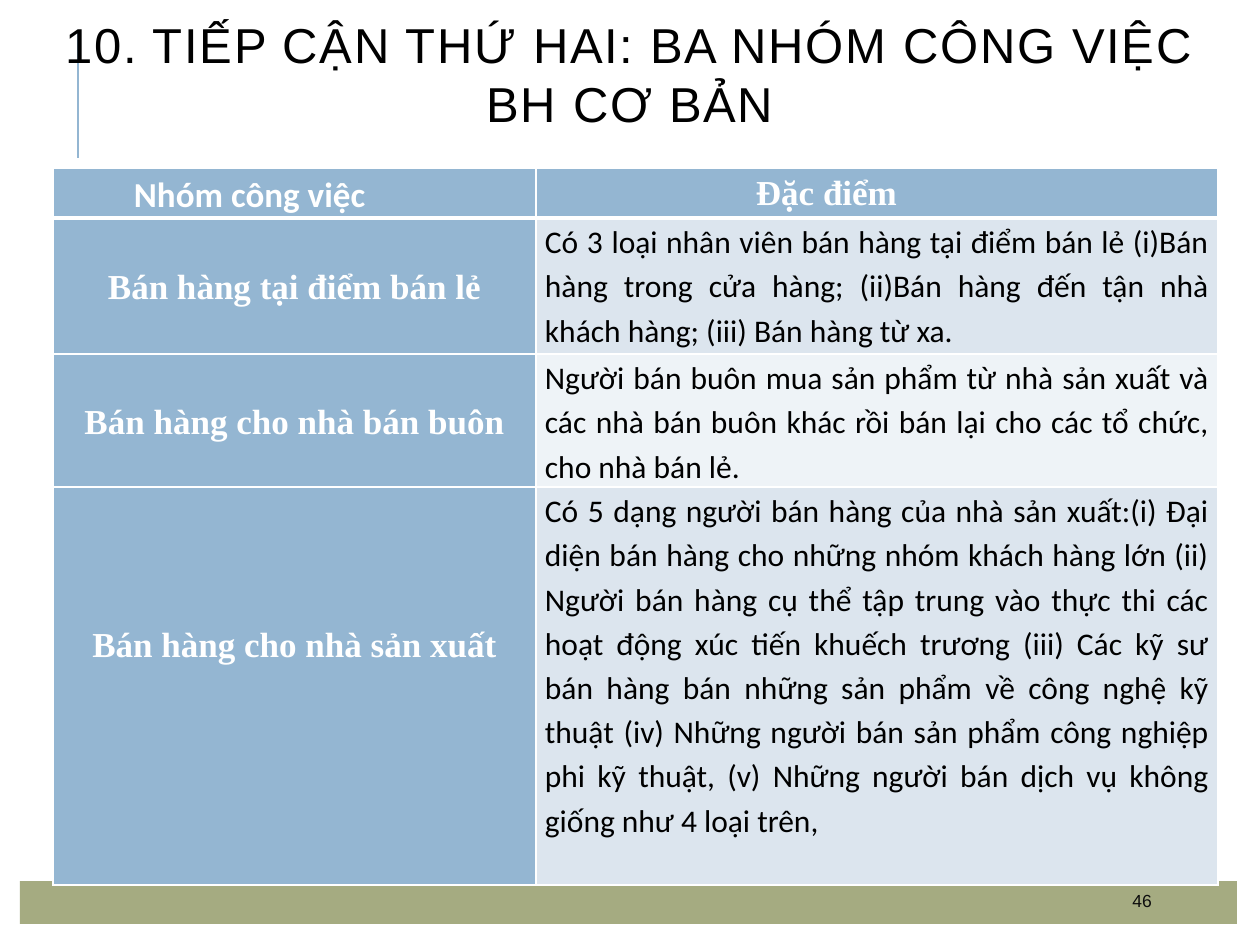
from dataclasses import dataclass
from lxml import etree
from pptx import Presentation, util as u
from pptx.dml.color import RGBColor
from pptx.enum import shapes, text
from pptx.oxml.ns import qn


@dataclass(frozen=True)
class Theme:
    """Colours, fonts and type sizes of the slide."""
    blue: str = "94B6D2"
    olive: str = "A5AB81"
    tint: str = "DCE5EE"
    pale: str = "EEF3F7"
    white: str = "FFFFFF"
    black: str = "000000"
    ink: str = "0D0D0D"
    sans: str = "Arial"
    body: str = "Calibri"
    serif: str = "Times New Roman"
    title: int = 28
    head: int = 20
    copy: int = 18
    small: int = 10


T = Theme()
ALIGN = text.PP_ALIGN
HEADS = [("Nhóm công việc", T.body, 81), ("Đặc điểm", T.serif, 220)]
ROWS = [
    ("Bán hàng tại điểm bán lẻ", 44, T.tint,
     "Có 3 loại nhân viên bán hàng tại điểm bán lẻ (i)Bán hàng trong cửa hàng; "
     "(ii)Bán hàng đến tận nhà khách hàng; (iii) Bán hàng từ xa."),
    ("Bán hàng cho nhà bán buôn", 44, T.pale,
     "Người bán buôn mua sản phẩm từ nhà sản xuất và các nhà bán buôn khác rồi "
     "bán lại cho các tổ chức, cho nhà bán lẻ."),
    ("Bán hàng cho nhà sản xuất", 133, T.tint,
     "Có 5 dạng người bán hàng của nhà sản xuất:(i) Đại diện bán hàng cho những "
     "nhóm khách hàng lớn (ii) Người bán hàng cụ thể tập trung vào thực thi các "
     "hoạt động xúc tiến khuếch trương (iii) Các kỹ sư bán hàng bán những sản phẩm "
     "về công nghệ kỹ thuật (iv) Những người bán sản phẩm công nghiệp phi kỹ thuật, "
     "(v) Những người bán dịch vụ không giống như 4 loại trên,"),
]
WIDTHS = [483, 682]
HEIGHTS = [50, 136, 133, 398]


def px(n):
    """Turn pixels into EMU."""
    return u.Emu(round(n * 914400 / 126))


def rgb(code):
    """Make a colour from its hex code."""
    return RGBColor.from_string(code)


def style(par, face, size, color, bold=False):
    """Set the font of a paragraph."""
    font = par.font
    font.name, font.size, font.bold = face, u.Pt(size), bold
    font.color.rgb = rgb(color)


def label(slide, box, words, size, color, align):
    """Add a text box centred on its height and return its paragraph."""
    frame = slide.shapes.add_textbox(*map(px, box)).text_frame
    frame.word_wrap = True
    frame.vertical_anchor = text.MSO_ANCHOR.MIDDLE
    par = frame.paragraphs[0]
    par.text, par.alignment = words, align
    style(par, T.sans, size, color)
    return par


def rule(slide, ends, color, width):
    """Add a straight line without a shadow."""
    line = slide.shapes.add_connector(shapes.MSO_CONNECTOR.STRAIGHT, *map(px, ends))
    line.line.color.rgb, line.line.width = rgb(color), u.Pt(width)
    etree.SubElement(line._element.spPr, qn("a:effectLst"))


def band(slide, box, color):
    """Add a plain filled bar."""
    bar = slide.shapes.add_shape(shapes.MSO_SHAPE.RECTANGLE, *map(px, box))
    bar.shadow.inherit = False
    bar.fill.solid()
    bar.fill.fore_color.rgb = rgb(color)
    bar.line.fill.background()


def edge(cell, base):
    """Draw white borders, with the bottom one of its own width."""
    props = cell._tc.get_or_add_tcPr()
    for i, (side, wide) in enumerate(zip("LRTB", (1, 1, 1, base))):
        line = etree.Element(qn(f"a:ln{side}"), w=str(u.Pt(wide)))
        fill = etree.SubElement(line, qn("a:solidFill"))
        etree.SubElement(fill, qn("a:srgbClr"), val=T.white)
        props.insert(i, line)


def write(cell, words, fill, face, size, color, align, bold=False, left=9, top=0, base=1):
    """Fill a table cell and return its paragraph."""
    cell.margin_left, cell.margin_right = px(left), px(9)
    cell.margin_top, cell.margin_bottom = px(top), 0
    cell.fill.solid()
    cell.fill.fore_color.rgb = rgb(fill)
    edge(cell, base)
    par = cell.text_frame.paragraphs[0]
    par.text, par.alignment, par.line_spacing = words, align, 1.15
    style(par, face, size, color, bold)
    return par


def grid(slide, left, top):
    """Add the table of sales groups."""
    table = slide.shapes.add_table(len(HEIGHTS), len(WIDTHS), px(left), px(top),
                                   px(sum(WIDTHS)), px(sum(HEIGHTS))).table
    for col, wide in zip(table.columns, WIDTHS):
        col.width = px(wide)
    for row, high in zip(table.rows, HEIGHTS):
        row.height = px(high)
    for i, (words, face, dent) in enumerate(HEADS):
        par = write(table.cell(0, i), words, T.blue, face, T.head, T.white,
                    ALIGN.JUSTIFY, True, left=dent, base=3)
        par.space_before, par.space_after = u.Pt(3), u.Pt(2)
    for i, (name, drop, fill, words) in enumerate(ROWS, 1):
        write(table.cell(i, 0), name, T.blue, T.serif, T.head, T.white,
              ALIGN.CENTER, True, top=drop)
        write(table.cell(i, 1), words, fill, T.body, T.copy, T.black, ALIGN.JUSTIFY)


def main():
    """Build the slide and save it."""
    deck = Presentation()
    deck.slide_width, deck.slide_height = px(1260), px(945)
    slide = deck.slides.add_slide(deck.slide_layouts[6])
    rule(slide, (78, 158, 78, 32), T.blue, 1.5)
    band(slide, (20, 881, 1217, 43), T.olive)
    title = label(slide, (42, 21, 1176, 105),
                  "10. TIẾP CẬN THỨ HAI: BA NHÓM CÔNG VIỆC BH CƠ BẢN",
                  T.title, T.black, ALIGN.CENTER)
    title.runs[0].font._element.set("spc", "100")
    label(slide, (1120, 882, 101, 38), "46", T.small, T.ink, ALIGN.LEFT)
    grid(slide, 53, 168)
    deck.save("out.pptx")


if __name__ == "__main__":
    main()
